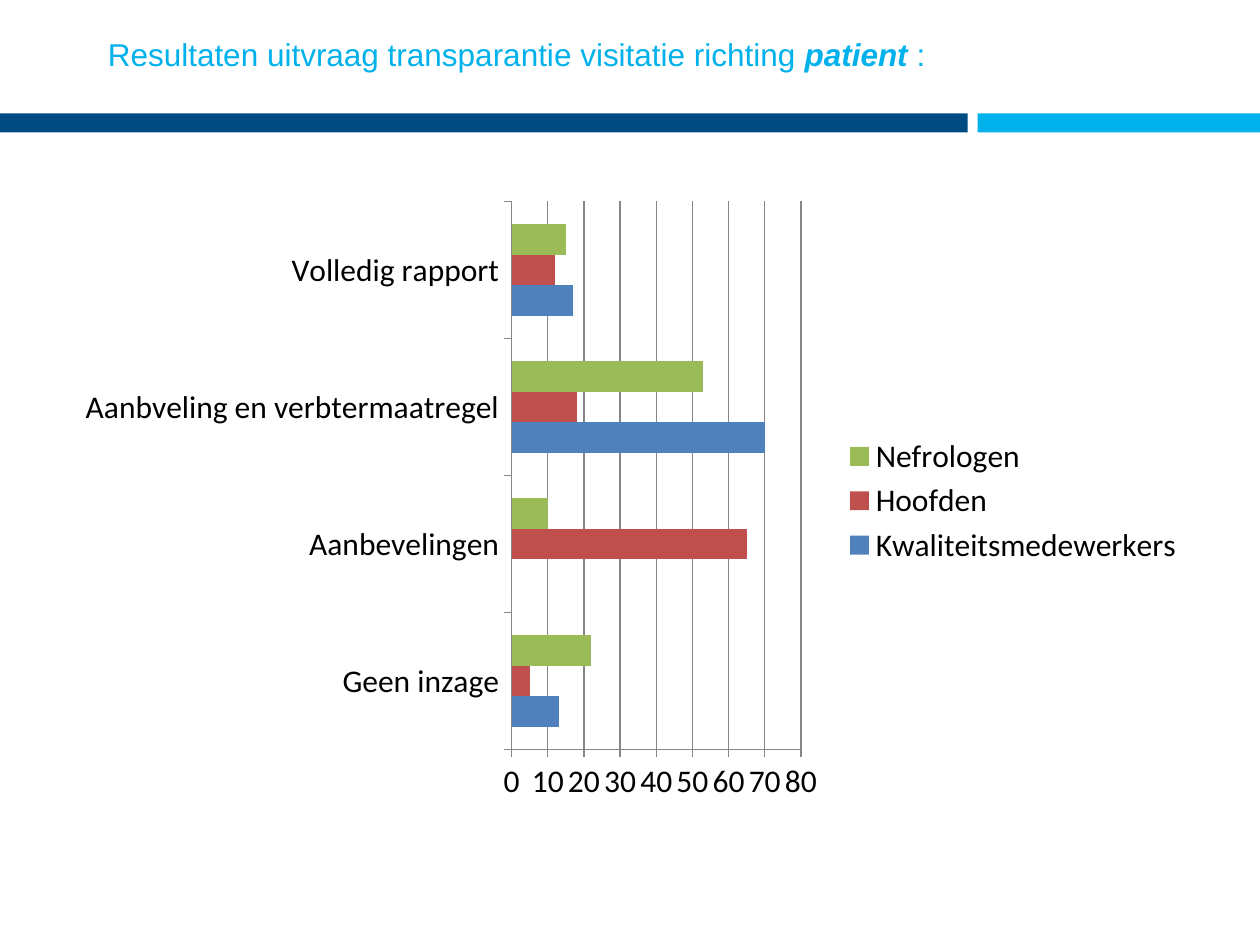
from pptx import Presentation
from pptx.chart.data import CategoryChartData
from pptx.dml.color import RGBColor
from pptx.enum.chart import XL_CHART_TYPE, XL_LEGEND_POSITION, XL_TICK_MARK
from pptx.enum.shapes import MSO_SHAPE
from pptx.enum.text import MSO_ANCHOR, PP_ALIGN
from pptx.util import Inches, Pt

WIDTH, HEIGHT = 10, 7.5
NAVY, CYAN, GREY, BLACK = "004C82", "01B1EC", "868686", "000000"
CATEGORIES = ["Geen inzage", "Aanbevelingen",
              "Aanbveling en verbtermaatregel", "Volledig rapport"]
SERIES = [
    ("Kwaliteitsmedewerkers", (13, 0, 70, 17), "4F81BD"),
    ("Hoofden", (5, 65, 18, 12), "C0504D"),
    ("Nefrologen", (22, 10, 53, 15), "9BBB59"),
]


def rgb(value):
    return RGBColor.from_string(value)


def share(left, top, width, height):
    return [Inches(n) for n in (left * WIDTH, top * HEIGHT,
                                width * WIDTH, height * HEIGHT)]


def format_font(font, name, size, color, bold=False, italic=False):
    font.name, font.size = name, Pt(size)
    font.bold, font.italic = bold, italic
    font.color.rgb = rgb(color)


def add_text(p, text, **fmt):
    r = p.add_run()
    r.text = text
    format_font(r.font, **fmt)


def add_title(s, box):
    title = s.shapes.title
    title.left, title.top, title.width, title.height = box
    tf = title.text_frame
    tf.word_wrap = True
    tf.vertical_anchor = MSO_ANCHOR.TOP
    p = tf.paragraphs[0]
    p.alignment = PP_ALIGN.CENTER
    base = dict(name="Arial", size=18, color=CYAN)
    add_text(p, "Resultaten uitvraag transparantie visitatie richting ", **base)
    add_text(p, "patient", bold=True, italic=True, **base)
    add_text(p, " :", **base)


def add_band(s, box, split=0.768, gap=0.008):
    left, top, width, height = box
    for start, end, color in ((0, split, NAVY), (split + gap, 1, CYAN)):
        bar = s.shapes.add_shape(MSO_SHAPE.RECTANGLE, left + int(start * width), top,
                                 int((end - start) * width), height)
        bar.shadow.inherit = False
        bar.fill.solid()
        bar.fill.fore_color.rgb = rgb(color)
        bar.line.fill.background()


def add_results_chart(s, box):
    data = CategoryChartData()
    data.categories = CATEGORIES
    for name, values, _ in SERIES:
        data.add_series(name, values)
    chart = s.shapes.add_chart(XL_CHART_TYPE.BAR_CLUSTERED, *box, data).chart
    format_font(chart.font, "Calibri", 18, BLACK)
    chart.has_title = False
    chart.has_legend = True
    chart.legend.position = XL_LEGEND_POSITION.RIGHT
    chart.legend.include_in_layout = False

    plot = chart.plots[0]
    plot.gap_width = 150
    plot.vary_by_categories = False
    for series, (_, _, color) in zip(plot.series, SERIES):
        series.format.fill.solid()
        series.format.fill.fore_color.rgb = rgb(color)

    for axis in (chart.category_axis, chart.value_axis):
        axis.major_tick_mark = XL_TICK_MARK.OUTSIDE
        axis.minor_tick_mark = XL_TICK_MARK.NONE
        axis.format.line.color.rgb = rgb(GREY)
    chart.value_axis.has_major_gridlines = True
    chart.value_axis.major_gridlines.format.line.color.rgb = rgb(GREY)


def main():
    prs = Presentation()
    prs.slide_width, prs.slide_height = Inches(WIDTH), Inches(HEIGHT)
    s = prs.slides.add_slide(prs.slide_layouts.get_by_name("Title Only"))
    add_band(s, share(0, 0.12, 1, 0.02))
    add_title(s, share(0.05, 0.03, 0.72, 0.08))
    add_results_chart(s, share(0.05, 0.2, 0.9, 0.66))
    prs.save("out.pptx")


if __name__ == "__main__":
    main()
